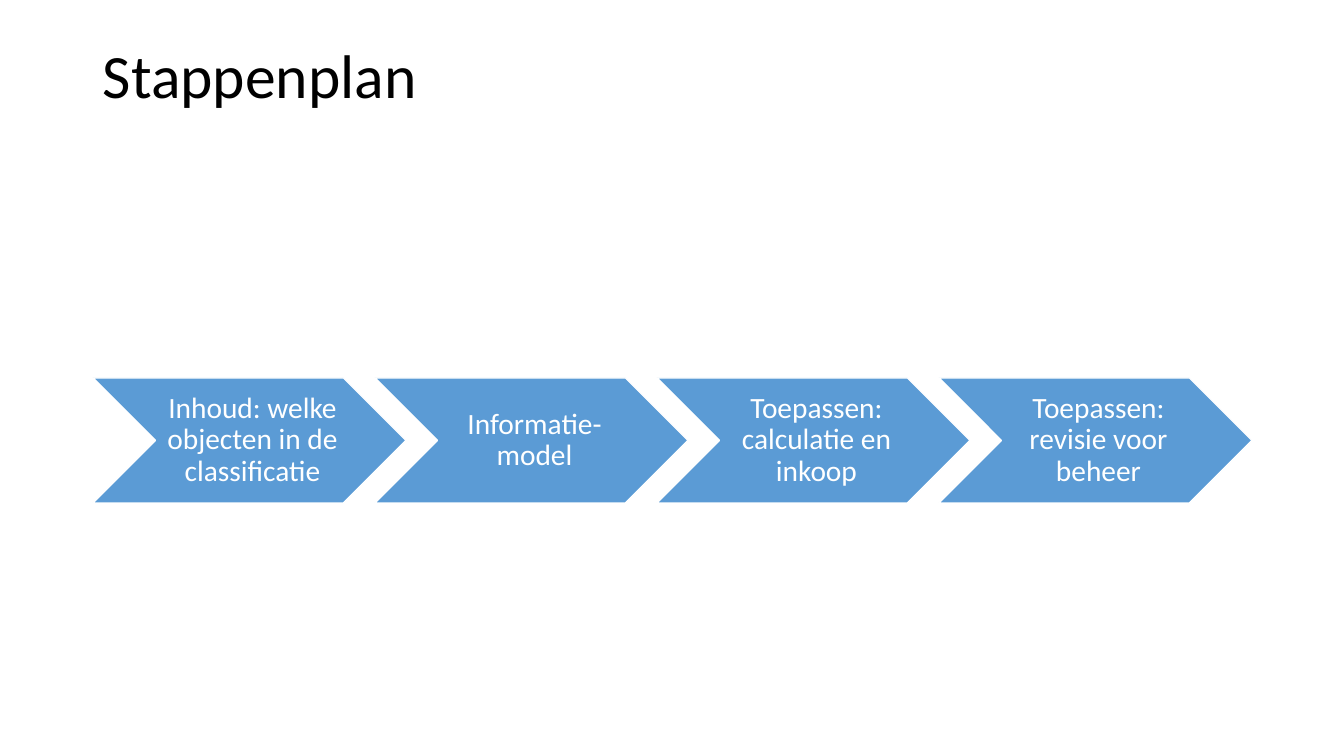
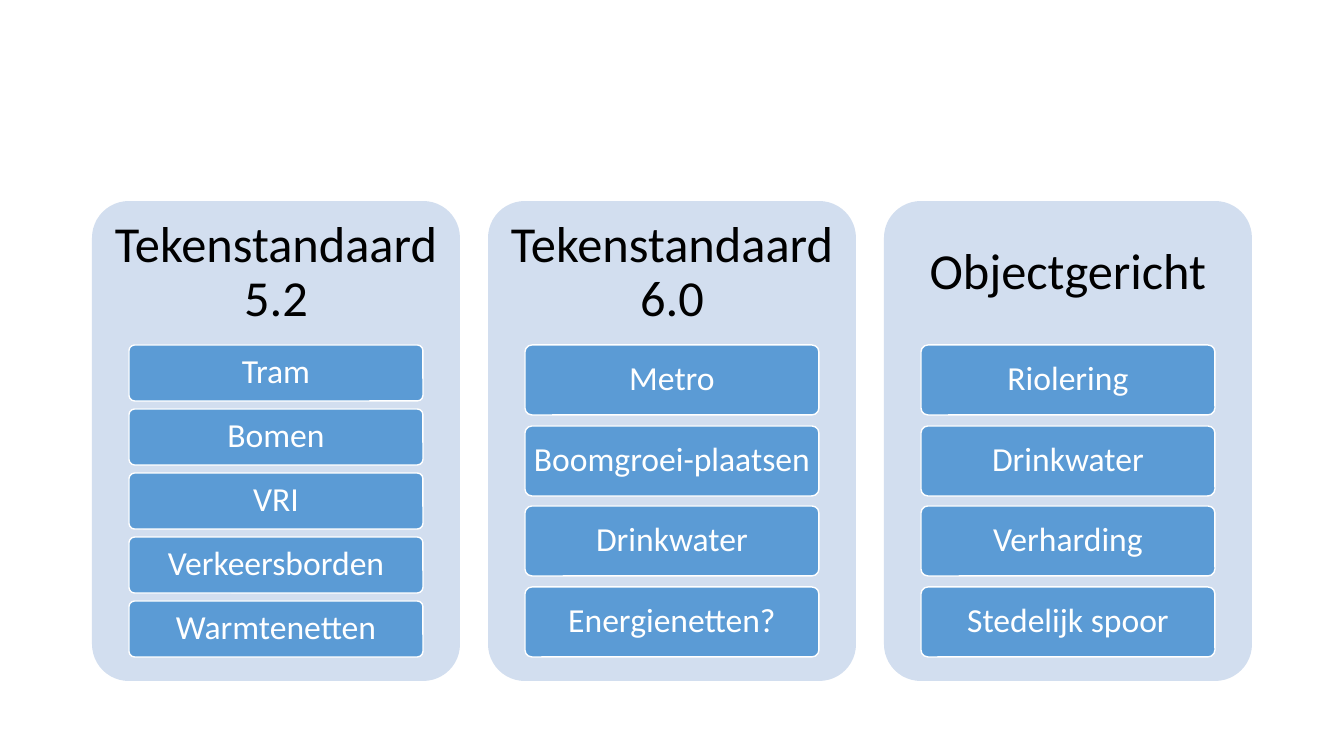
from dataclasses import dataclass

from pptx import Presentation
from pptx import util as u
from pptx.dml.color import RGBColor
from pptx.enum import shapes, text

PX = 914400 / 100.8
FONT = "Calibri"
BLACK = RGBColor(0x00, 0x00, 0x00)
WHITE = RGBColor(0xFF, 0xFF, 0xFF)
BLUE = RGBColor(0x5B, 0x9B, 0xD5)
PALE_BLUE = RGBColor(0xD2, 0xDE, 0xEF)

STEP_LEFT, STEP_TOP, STEP_W, STEP_H, STEP_PITCH = 93, 378, 313, 125, 282
PANEL_LEFT, PANEL_TOP, PANEL_W, PANEL_H, PANEL_PITCH = 92, 201, 368, 480, 396
HEADING_H = 144
ITEM_INDENT, ITEM_W, ITEMS_H = 37, 294, 312
ITEM_GAP_RATIO = 2 / 13


@dataclass(frozen=True)
class Box:
    left: int
    top: int
    width: int
    height: int

    def emu(self) -> tuple[int, ...]:
        return tuple(px(v) for v in (self.left, self.top, self.width, self.height))


@dataclass(frozen=True)
class TextStyle:
    size: int
    color: RGBColor
    insets: tuple[int, int, int, int]
    align: text.PP_ALIGN = text.PP_ALIGN.CENTER
    anchor: text.MSO_ANCHOR = text.MSO_ANCHOR.MIDDLE


@dataclass(frozen=True)
class Panel:
    heading: str
    items: tuple[str, ...]


TITLE = TextStyle(44, BLACK, (10, 5, 10, 5), text.PP_ALIGN.LEFT, text.MSO_ANCHOR.TOP)
STEP = TextStyle(21, WHITE, (9, 3, 3, 3))
HEADING = TextStyle(36, BLACK, (15, 15, 15, 15))
ITEM = TextStyle(24, WHITE, (6, 5, 6, 5))

STEPS = (
    "Inhoud: welke objecten in de classificatie",
    "Informatie-model",
    "Toepassen: calculatie en inkoop",
    "Toepassen: revisie voor beheer",
)
PANELS = (
    Panel("Tekenstandaard 5.2", ("Tram", "Bomen", "VRI", "Verkeersborden", "Warmtenetten")),
    Panel("Tekenstandaard 6.0", ("Metro", "Boomgroei-plaatsen", "Drinkwater", "Energienetten?")),
    Panel("Objectgericht", ("Riolering", "Drinkwater", "Verharding", "Stedelijk spoor")),
)


def px(value: float) -> int:
    return round(value * PX)


def write(sp, words: str, style: TextStyle) -> None:
    tf = sp.text_frame
    tf.text = words
    tf.word_wrap = True
    tf.auto_size = text.MSO_AUTO_SIZE.NONE
    tf.vertical_anchor = style.anchor
    tf.margin_left, tf.margin_top, tf.margin_right, tf.margin_bottom = map(px, style.insets)
    p = tf.paragraphs[0]
    p.alignment = style.align
    p.line_spacing = 0.9
    for r in p.runs:
        r.font.name = FONT
        r.font.size = u.Pt(style.size)
        r.font.color.rgb = style.color


def add_filled(s, kind: shapes.MSO_SHAPE, box: Box, fill: RGBColor, outlined: bool = True):
    sp = s.shapes.add_shape(kind, *box.emu())
    sp.shadow.inherit = False
    sp.fill.solid()
    sp.fill.fore_color.rgb = fill
    if outlined:
        sp.line.color.rgb = WHITE
        sp.line.width = u.Pt(1)
    else:
        sp.line.fill.background()
    return sp


def add_rounded(s, box: Box, fill: RGBColor, outlined: bool = True):
    sp = add_filled(s, shapes.MSO_SHAPE.ROUNDED_RECTANGLE, box, fill, outlined)
    sp.adjustments[0] = 0.1
    return sp


def add_panel(s, left: int, panel: Panel) -> None:
    add_rounded(s, Box(left, PANEL_TOP, PANEL_W, PANEL_H), PALE_BLUE, outlined=False)
    heading = s.shapes.add_textbox(*Box(left, PANEL_TOP, PANEL_W, HEADING_H).emu())
    write(heading, panel.heading, HEADING)
    n = len(panel.items)
    height = ITEMS_H / (n + (n - 1) * ITEM_GAP_RATIO)
    pitch = height * (1 + ITEM_GAP_RATIO)
    for i, item in enumerate(panel.items):
        top = PANEL_TOP + HEADING_H + round(i * pitch)
        sp = add_rounded(s, Box(left + ITEM_INDENT, top, ITEM_W, round(height)), BLUE)
        write(sp, item, ITEM)


def build_steps(prs) -> None:
    s = prs.slides.add_slide(prs.slide_layouts[5])
    title = s.shapes.title
    title.left, title.top, title.width, title.height = Box(93, 40, 1159, 146).emu()
    write(title, "Stappenplan", TITLE)
    for i, step in enumerate(STEPS):
        box = Box(STEP_LEFT + i * STEP_PITCH, STEP_TOP, STEP_W, STEP_H)
        write(add_filled(s, shapes.MSO_SHAPE.CHEVRON, box, BLUE), step, STEP)


def build_panels(prs) -> None:
    s = prs.slides.add_slide(prs.slide_layouts[6])
    for i, panel in enumerate(PANELS):
        add_panel(s, PANEL_LEFT + i * PANEL_PITCH, panel)


def main() -> None:
    prs = Presentation()
    prs.slide_width, prs.slide_height = px(1344), px(756)
    build_steps(prs)
    build_panels(prs)
    prs.save("out.pptx")


if __name__ == "__main__":
    main()
